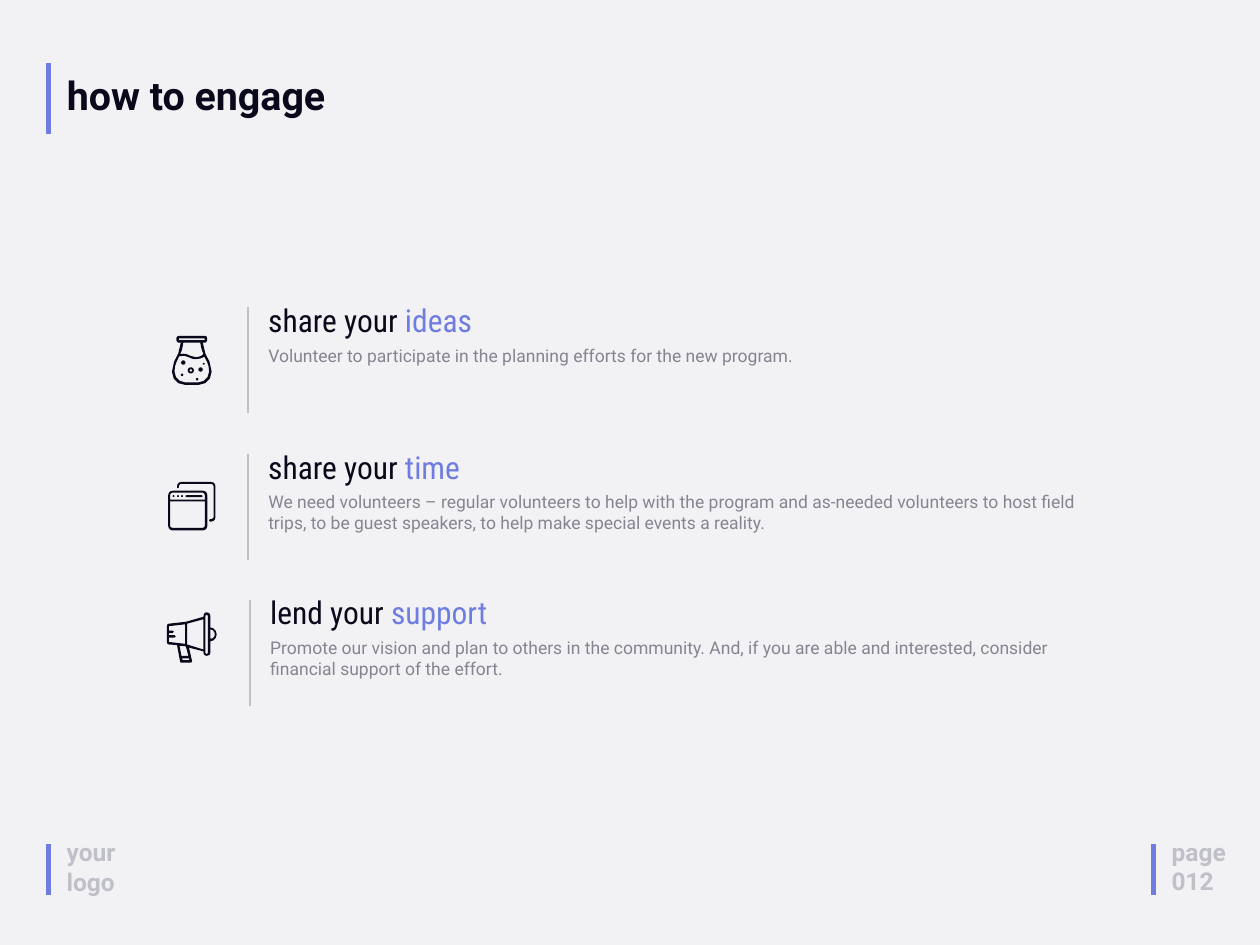
import dataclasses
import math
import typing

import lxml.etree
import pptx
import pptx.dml.color
import pptx.enum.shapes
import pptx.enum.text
import pptx.oxml.ns
import pptx.shapes.autoshape
import pptx.shapes.shapetree
import pptx.text.text
import pptx.util

PX = 9144
CURVE_STEPS = 3
BACKGROUND = pptx.dml.color.RGBColor(0xF2, 0xF2, 0xF5)
INK = pptx.dml.color.RGBColor(0x0A, 0x09, 0x1B)
ACCENT = pptx.dml.color.RGBColor(0x6F, 0x7D, 0xE1)
MUTED = pptx.dml.color.RGBColor(0xC0, 0xC0, 0xC8)
BODY = pptx.dml.color.RGBColor(0x85, 0x85, 0x91)

Point = tuple[float, float]
Contour = list[Point]


@dataclasses.dataclass(frozen=True)
class Run:
    text: str
    size: int
    color: pptx.dml.color.RGBColor
    font: str = "Roboto"
    bold: bool = False


@dataclasses.dataclass(frozen=True)
class Line:
    x1: int
    y1: int
    x2: int
    y2: int


@dataclasses.dataclass(frozen=True)
class Way:
    left: int
    top: int
    lead: str
    keyword: str
    description: str
    icon: list[Contour]


def outline(start: Point, *segments: tuple[float, ...]) -> Contour:
    points: Contour = [start]
    for segment in segments:
        if len(segment) == 2:
            points.append((segment[0], segment[1]))
            continue
        x0, y0 = points[-1]
        x1, y1, x2, y2, x3, y3 = segment
        for step in range(1, CURVE_STEPS + 1):
            t = step / CURVE_STEPS
            a, b, c, d = (1 - t) ** 3, 3 * t * (1 - t) ** 2, 3 * t * t * (1 - t), t ** 3
            points.append((a * x0 + b * x1 + c * x2 + d * x3, a * y0 + b * y1 + c * y2 + d * y3))
    return points


def circle(x: float, y: float, radius: float, corners: int = 10) -> Contour:
    angles = [2 * math.pi * corner / corners for corner in range(corners)]
    return [(x + radius * math.cos(angle), y + radius * math.sin(angle)) for angle in angles]


FLASK = [
    outline((322, 544), (325, 544), (327, 544, 329, 542, 329, 540), (329, 537),
            (329, 535, 327, 533, 325, 533), (284, 533), (282, 533, 280, 535, 280, 537), (280, 540),
            (280, 542, 282, 544, 284, 544), (287, 544), (286, 566, 273, 570, 273, 590),
            (273, 602, 282, 611, 294, 611), (315, 611), (327, 611, 336, 602, 336, 590),
            (336, 570, 323, 566, 322, 544)),
    outline((284, 537), (325, 537), (325, 540), (284, 540)),
    outline((291, 544), (318, 544), (319, 552, 321, 558, 323, 562), (321, 565, 312, 570, 303, 565),
            (296, 561, 290, 561, 286, 562), (289, 557, 290, 551, 291, 544)),
    outline((315, 607), (294, 607), (285, 607, 277, 599, 277, 590), (277, 580, 280, 575, 283, 569),
            (284, 566), (285, 566, 292, 562, 302, 568), (305, 570, 308, 570, 311, 570),
            (317, 570, 322, 568, 324, 566), (326, 569), (329, 575, 332, 580, 332, 590),
            (332, 599, 324, 607, 315, 607)),
    circle(289, 595, 2), circle(291, 575.5, 3.5), circle(323.5, 577.5, 1.5),
    circle(318.5, 586.5, 3.5), circle(313, 602, 2), circle(303, 588, 5), circle(303, 588, 2),
]
WINDOWS = [
    outline((322, 779), (274, 779), (270, 779, 267, 782, 267, 786), (267, 835),
            (267, 839, 270, 842, 274, 842), (322, 842), (326, 842, 329, 839, 329, 835), (329, 786),
            (329, 782, 326, 779, 322, 779)),
    outline((325, 835), (325, 836, 323, 838, 322, 838), (274, 838), (272, 838, 270, 836, 270, 835),
            (270, 796), (325, 796)),
    outline((325, 793), (270, 793), (270, 786), (270, 784, 272, 782, 274, 782), (322, 782),
            (323, 782, 325, 784, 325, 786)),
    outline((335, 765), (287, 765), (284, 765, 281, 768, 281, 772), (281, 773),
            (281, 774, 281, 775, 282, 775), (283, 775, 284, 774, 284, 773), (284, 772),
            (284, 770, 286, 768, 287, 768), (335, 768), (337, 768, 339, 770, 339, 772), (339, 821),
            (339, 822, 337, 824, 335, 824), (334, 824), (333, 824, 332, 825, 332, 826),
            (332, 827, 333, 828, 334, 828), (335, 828), (339, 828, 342, 825, 342, 821), (342, 772),
            (342, 768, 339, 765, 335, 765)),
    outline((320, 786), (296, 786), (294, 787.5), (296, 789), (320, 789), (322, 787.5)),
    *(circle(x, 787.5, 1.5) for x in (275.5, 282.5, 289)),
]
MEGAPHONE = [
    outline((334, 996), (334, 978), (334, 974, 331, 972, 328, 972), (325, 972, 323, 974, 323, 978),
            (323, 979), (295, 987), (268, 990), (266, 990, 265, 992, 265, 994), (265, 1019),
            (265, 1021, 266, 1023, 268, 1023), (281, 1024), (286, 1051), (288, 1052), (303, 1052),
            (305, 1050), (300, 1028), (323, 1034), (323, 1036), (323, 1039, 325, 1041, 328, 1041),
            (331, 1041, 334, 1039, 334, 1036), (334, 1018), (339, 1018, 344, 1013, 344, 1007),
            (344, 1001, 339, 996, 334, 996)),
    outline((268, 1019), (268, 1012), (277, 1012), (279, 1010), (277, 1008), (268, 1008),
            (268, 1005), (274, 1005), (276, 1003), (274, 1001), (268, 1001), (268, 994),
            (294, 991), (294, 1022)),
    outline((288, 1041), (285, 1025), (295, 1026), (299, 1041)),
    outline((300, 1045), (300, 1048), (290, 1048), (289, 1045)),
    outline((323, 1031), (297, 1023), (297, 990), (323, 983)),
    outline((330, 1036), (330, 1037, 329, 1038, 328, 1038), (327, 1038, 326, 1037, 326, 1036),
            (326, 978), (326, 977, 327, 976, 328, 976), (329, 976, 330, 977, 330, 978)),
    outline((334, 1014), (334, 999), (338, 999, 341, 1003, 341, 1007),
            (341, 1011, 338, 1014, 334, 1014)),
]
WAYS = (
    Way(416, 473, "share your ", "ideas",
        "Volunteer to participate in the planning efforts for the new program.", FLASK),
    Way(416, 706, "share your ", "time",
        "We need volunteers – regular volunteers to help with the program and as-needed volunteers "
        "to host field trips, to be guest speakers, to help make special events a reality.", WINDOWS),
    Way(419, 937, "lend your ", "support",
        "Promote our vision and plan to others in the community. And, if you are able and interested, "
        "consider financial support of the effort.", MEGAPHONE),
)
ACCENT_BARS = (Line(77, 100, 77, 213), Line(77, 1340, 77, 1421), Line(1831, 1340, 1831, 1421))


def px(value: float) -> pptx.util.Emu:
    return pptx.util.Emu(round(value * PX))


def add_run(paragraph: pptx.text.text._Paragraph, run: Run) -> None:
    text_run = paragraph.add_run()
    text_run.text = run.text
    text_run.font.name = run.font
    text_run.font.size = pptx.util.Pt(run.size)
    text_run.font.bold = run.bold
    text_run.font.color.rgb = run.color


def add_text(shapes: pptx.shapes.shapetree.SlideShapes, left: int, top: int, width: int,
             height: int, paragraphs: list[list[Run]]) -> None:
    frame = shapes.add_textbox(px(left), px(top), px(width), px(height)).text_frame
    frame.word_wrap = True
    frame.auto_size = pptx.enum.text.MSO_AUTO_SIZE.SHAPE_TO_FIT_TEXT
    for index, runs in enumerate(paragraphs):
        paragraph = frame.add_paragraph() if index else frame.paragraphs[0]
        for run in runs:
            add_run(paragraph, run)


def add_line(shapes: pptx.shapes.shapetree.SlideShapes, line: Line,
             color: pptx.dml.color.RGBColor, weight: float) -> None:
    connector = shapes.add_connector(pptx.enum.shapes.MSO_CONNECTOR.STRAIGHT,
                                     px(line.x1), px(line.y1), px(line.x2), px(line.y2))
    connector.line.color.rgb = color
    connector.line.width = pptx.util.Pt(weight)
    lxml.etree.SubElement(connector._element.spPr, pptx.oxml.ns.qn("a:effectLst"))


def add_icon(shapes: pptx.shapes.shapetree.SlideShapes, contours: list[Contour]) -> None:
    first, *others = [[(px(x), px(y)) for x, y in contour] for contour in contours]
    builder = shapes.build_freeform(*first[0])
    builder.add_line_segments(first[1:])
    for contour in others:
        builder.move_to(*contour[0])
        builder.add_line_segments(contour[1:])
    icon = builder.convert_to_shape()
    icon.shadow.inherit = False
    icon.fill.solid()
    icon.fill.fore_color.rgb = INK
    icon.line.fill.background()


def add_way(shapes: pptx.shapes.shapetree.SlideShapes, way: Way) -> None:
    heading = [Run(way.lead, 36, INK, "Roboto Condensed"),
               Run(way.keyword, 36, ACCENT, "Roboto Condensed")]
    add_text(shapes, way.left, way.top, 830, 71, [heading])
    add_text(shapes, way.left, way.top + 69, 1359, 77, [[Run(way.description, 20, BODY)]])
    divider = way.left - 22
    add_line(shapes, Line(divider, way.top + 15, divider, way.top + 183), MUTED, 2)
    add_icon(shapes, way.icon)


def style_title(title: pptx.shapes.autoshape.Shape) -> None:
    title.left, title.top, title.width, title.height = px(96), px(116), px(596), px(78)
    title.text_frame.auto_size = pptx.enum.text.MSO_AUTO_SIZE.NONE
    paragraph = title.text_frame.paragraphs[0]
    paragraph.alignment = pptx.enum.text.PP_ALIGN.LEFT
    paragraph.line_spacing = 0.9
    add_run(paragraph, Run("how to engage", 45, INK, bold=True))


def main() -> None:
    presentation = pptx.Presentation()
    presentation.slide_width, presentation.slide_height = px(2000), px(1500)
    slide = presentation.slides.add_slide(presentation.slide_layouts.get_by_name("Title Only"))
    slide.background.fill.solid()
    slide.background.fill.fore_color.rgb = BACKGROUND
    style_title(slide.shapes.title)
    for bar in ACCENT_BARS:
        add_line(slide.shapes, bar, ACCENT, 5)
    add_text(slide.shapes, 96, 1324, 119, 104, [[Run("your logo", 28, MUTED, bold=True)]])
    add_text(slide.shapes, 1850, 1323, 150, 104,
             [[Run(text, 28, MUTED, bold=True)] for text in ("page", "012")])
    for way in WAYS:
        add_way(slide.shapes, way)
    presentation.save("out.pptx")


if __name__ == "__main__":
    main()
